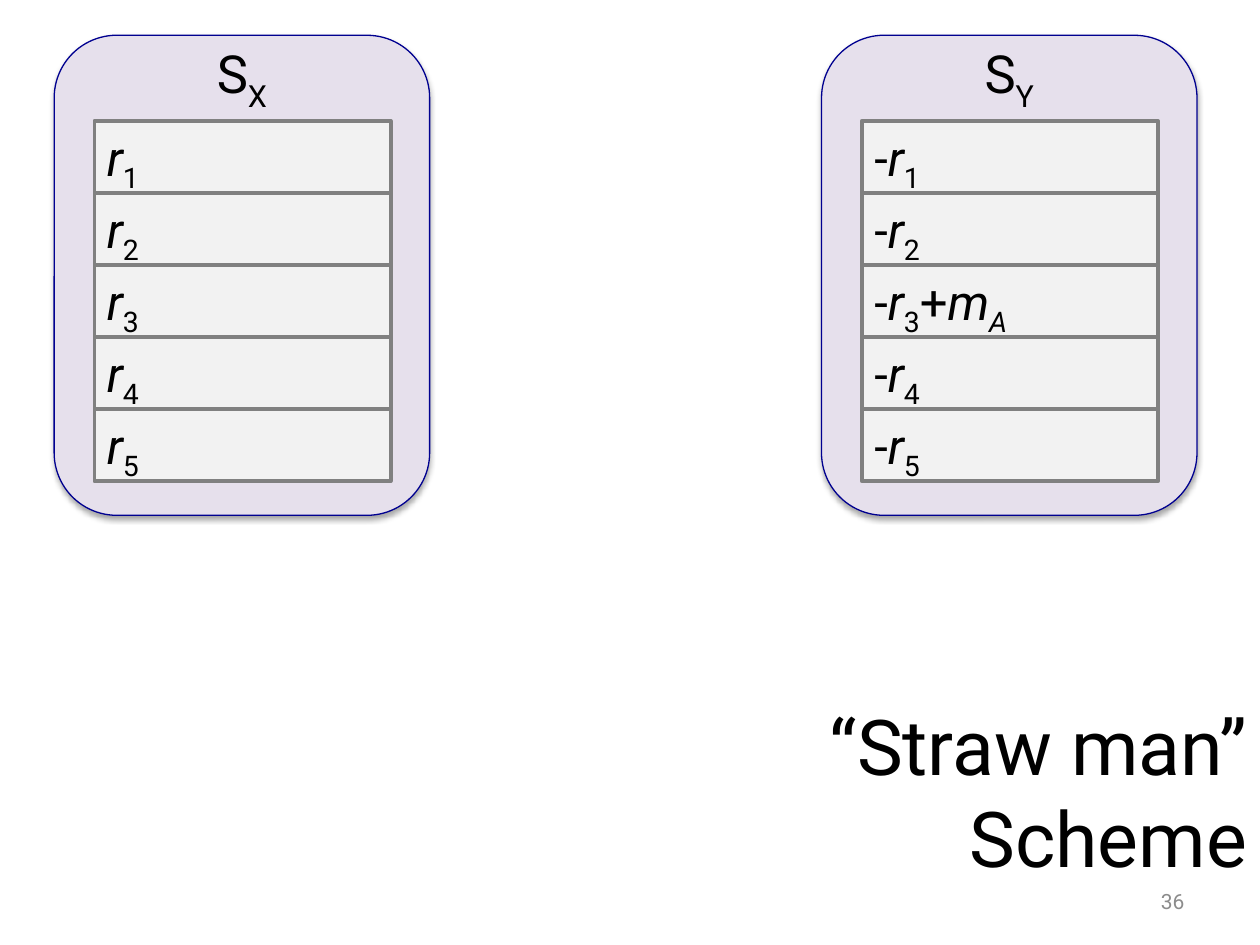
from pptx import Presentation
from pptx.dml.color import RGBColor
from pptx.enum import shapes, text
from pptx.oxml import parse_xml
from pptx.oxml.ns import nsdecls, qn
from pptx.util import Inches, Pt

COLORS = {
    "text": "000000",
    "number": "8C8C8C",
    "server": "E6E0EC",
    "server_line": "000090",
    "row": "F2F2F2",
    "row_line": "808080",
}
PLAIN, ITALIC, SUB, ITALIC_SUB = "", "i", "s", "is"
SERVER_TOP, ROWS_TOP, ROW_HEIGHT = 0.28, 0.96, 2.86 / 5
SERVER_WIDTH, ROW_WIDTH = 2.98, 2.35


class SlideBuilder:
    font = "Roboto"

    def __init__(self, slide):
        self.slide = slide

    def color(self, name):
        return RGBColor.from_string(COLORS[name])

    def add_pieces(self, shape, pieces, size, align, color="text", grow=False,
                   anchor=text.MSO_ANCHOR.TOP):
        """Append (string, style) pieces to the shape's first paragraph."""
        frame = shape.text_frame
        frame.word_wrap = True
        frame.vertical_anchor = anchor
        frame.auto_size = (text.MSO_AUTO_SIZE.SHAPE_TO_FIT_TEXT if grow
                           else text.MSO_AUTO_SIZE.NONE)
        paragraph = frame.paragraphs[0]
        paragraph.alignment = align
        for string, style in pieces:
            run = paragraph.add_run()
            run.text = string
            run.font.name = self.font
            run.font.size = Pt(size)
            run.font.color.rgb = self.color(color)
            run.font.italic = "i" in style
            if "s" in style:
                run._r.get_or_add_rPr().set("baseline", "-25000")

    def title(self, lines, left, top, width, height):
        title = self.slide.shapes.title
        title.left, title.top = Inches(left), Inches(top)
        title.width, title.height = Inches(width), Inches(height)
        for index, line in enumerate(lines):
            if index:
                title.text_frame.paragraphs[0].add_line_break()
            self.add_pieces(title, [(line, PLAIN)], 44, text.PP_ALIGN.RIGHT)

    def label(self, pieces, left, top, width, height, size, **options):
        box = self.slide.shapes.add_textbox(
            Inches(left), Inches(top), Inches(width), Inches(height))
        self.add_pieces(box, pieces, size, **options)

    def box(self, kind, left, top, width, height, fill, line, weight):
        shape = self.slide.shapes.add_shape(
            kind, Inches(left), Inches(top), Inches(width), Inches(height))
        shape.shadow.inherit = False
        shape.fill.solid()
        shape.fill.fore_color.rgb = self.color(fill)
        shape.line.color.rgb = self.color(line)
        shape.line.width = Pt(weight)
        return shape

    def drop_shadow(self, shape):
        effects = shape._element.spPr.find(qn("a:effectLst"))
        effects.append(parse_xml(
            f'<a:outerShdw {nsdecls("a")} blurRad="{Pt(3.1)}" dist="{Pt(1.8)}" '
            'dir="5400000" rotWithShape="0"><a:srgbClr val="000000">'
            '<a:alpha val="35000"/></a:srgbClr></a:outerShdw>'))

    def server(self, name, left, rows):
        """Draw a rounded server panel with its name and stacked rows."""
        panel = self.box(shapes.MSO_SHAPE.ROUNDED_RECTANGLE, left, SERVER_TOP,
                         SERVER_WIDTH, 3.81, "server", "server_line", 0.75)
        self.drop_shadow(panel)
        self.label([("S", PLAIN), (name, SUB)], left, SERVER_TOP, SERVER_WIDTH,
                   0.61, 30, align=text.PP_ALIGN.CENTER, grow=True)
        for index, pieces in enumerate(rows):
            row = self.box(shapes.MSO_SHAPE.RECTANGLE, left + 0.32,
                           ROWS_TOP + index * ROW_HEIGHT, ROW_WIDTH, ROW_HEIGHT,
                           "row", "row_line", 2.25)
            self.add_pieces(row, pieces, 28, text.PP_ALIGN.LEFT, grow=True)


def main():
    presentation = Presentation()
    presentation.slide_width = Inches(10)
    presentation.slide_height = Inches(7.5)
    slide = presentation.slides.add_slide(presentation.slide_layouts[5])
    builder = SlideBuilder(slide)

    shares = [[("r", ITALIC), (str(number), SUB)] for number in range(1, 6)]
    negated = [[("-", PLAIN)] + share for share in shares]
    negated[2] += [("+", PLAIN), ("m", ITALIC), ("A", ITALIC_SUB)]

    builder.label([("36", PLAIN)], 7.17, 6.95, 2.33, 0.4, 12,
                  align=text.PP_ALIGN.RIGHT, color="number",
                  anchor=text.MSO_ANCHOR.MIDDLE)
    builder.server("X", 0.43, shares)
    builder.server("Y", 6.52, negated)
    builder.title(["“Straw man”", "Scheme"], 6.24, 5.49, 3.76, 1.7)
    presentation.save("out.pptx")


if __name__ == "__main__":
    main()
